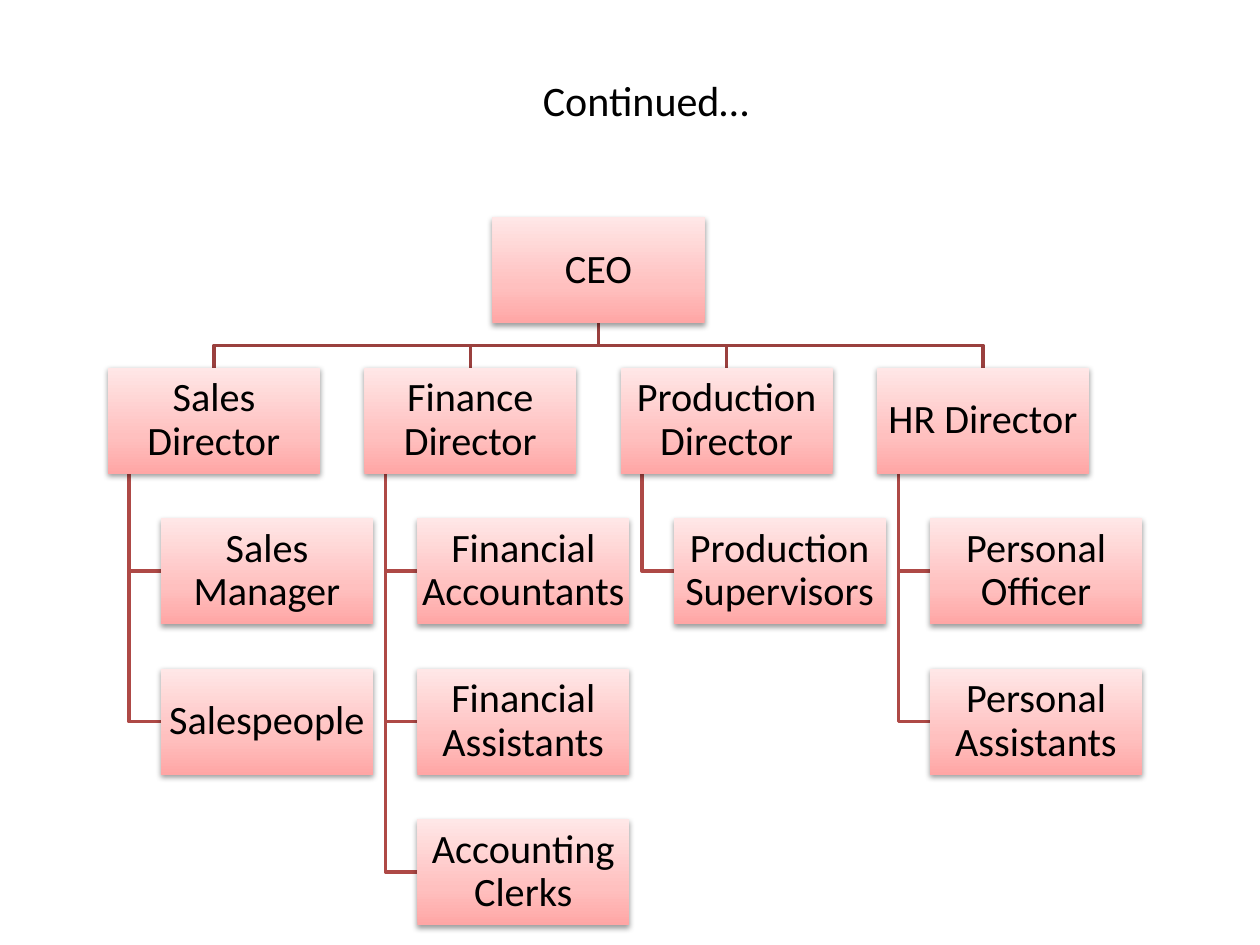
import copy

import pptx
import pptx.dml.color
import pptx.enum.shapes
import pptx.enum.text
import pptx.oxml
import pptx.oxml.ns
import pptx.util

Pt = pptx.util.Pt
RGB = pptx.dml.color.RGBColor.from_string
CENTER = pptx.enum.text.PP_ALIGN.CENTER
MIDDLE = pptx.enum.text.MSO_ANCHOR.MIDDLE

COLORS = {
    "text": "000000",
    "top_line": "9A403E",
    "staff_line": "AE4946",
    "box_bottom": "FFA6A5",
    "box_middle": "FFC0BF",
    "box_top": "FFE7E7",
}
GRADIENT = [(0, "box_bottom"), (0.35, "box_middle"), (1, "box_top")]
SHADOW = (
    f'<a:outerShdw {pptx.oxml.ns.nsdecls("a")} blurRad="40000" dist="20000" '
    'dir="5400000" rotWithShape="0"><a:srgbClr val="000000">'
    '<a:alpha val="38000"/></a:srgbClr></a:outerShdw>'
)

DEPARTMENTS = [
    ("Sales Director", ["Sales Manager", "Salespeople"]),
    ("Finance Director",
     ["Financial Accountants", "Financial Assistants", "Accounting Clerks"]),
    ("Production Director", ["Production Supervisors"]),
    ("HR Director", ["Personal Officer", "Personal Assistants"]),
]

BOX_W, BOX_H = 121.2, 60.6
LEFT, TOP = 61.7, 124.1
COLUMN_STEP, ROW_STEP = 146.5, 86
INDENT = BOX_W / 4
STEM = BOX_W / 10

presentation = pptx.Presentation()
presentation.slide_width, presentation.slide_height = Pt(720), Pt(540)
slide = presentation.slides.add_slide(presentation.slide_layouts[6])


def add_elbow(points, color):
    (start_x, start_y), *rest = [(Pt(x), Pt(y)) for x, y in points]
    builder = slide.shapes.build_freeform(start_x, start_y)
    builder.add_line_segments(rest, close=False)
    elbow = builder.convert_to_shape()
    elbow.shadow.inherit = False
    elbow.fill.background()
    elbow.line.width = Pt(2)
    elbow.line.color.rgb = RGB(COLORS[color])


def write_text(shape, text, size, line_spacing, margins):
    frame = shape.text_frame
    settings = {"word_wrap": True, "vertical_anchor": MIDDLE, **margins}
    for name, value in settings.items():
        setattr(frame, name, value)
    paragraph = frame.paragraphs[0]
    paragraph.text = text
    paragraph.alignment = CENTER
    paragraph.line_spacing = line_spacing
    font = paragraph.runs[0].font
    font.name, font.size = "Calibri", Pt(size)
    font.color.rgb = RGB(COLORS["text"])


# Work out where each post sits and which lines lead to it
ceo_left = LEFT + COLUMN_STEP * (len(DEPARTMENTS) - 1) / 2
ceo_middle = ceo_left + BOX_W / 2
ceo_bottom = TOP + BOX_H
director_top = TOP + ROW_STEP
bar_y = (ceo_bottom + director_top) / 2

posts = [("CEO", ceo_left, TOP)]
for column, (director, staff) in enumerate(DEPARTMENTS):
    left = LEFT + column * COLUMN_STEP
    middle = left + BOX_W / 2
    posts.append((director, left, director_top))
    add_elbow([(ceo_middle, ceo_bottom), (ceo_middle, bar_y),
               (middle, bar_y), (middle, director_top)], "top_line")
    for row, member in enumerate(staff, start=1):
        top = director_top + row * ROW_STEP
        posts.append((member, left + INDENT, top))
        add_elbow([(left + STEM, director_top + BOX_H),
                   (left + STEM, top + BOX_H / 2),
                   (left + INDENT, top + BOX_H / 2)], "staff_line")

# Boxes lie over the lines
box_margins = {f"margin_{side}": Pt(1.46) for side in ("left", "top", "right", "bottom")}
for post, left, top in posts:
    box = slide.shapes.add_shape(
        pptx.enum.shapes.MSO_SHAPE.RECTANGLE, Pt(left), Pt(top), Pt(BOX_W), Pt(BOX_H))
    box.line.fill.background()
    box.fill.gradient()
    box.fill.gradient_angle = 90
    stop_list = box.element.spPr.find(".//" + pptx.oxml.ns.qn("a:gsLst"))
    stop_list.append(copy.deepcopy(stop_list[-1]))
    for stop, (position, color) in zip(box.fill.gradient_stops, GRADIENT):
        stop.position = position
        stop.color.rgb = RGB(COLORS[color])
    box.shadow.inherit = False
    effects = box.element.spPr.find(pptx.oxml.ns.qn("a:effectLst"))
    effects.append(pptx.oxml.parse_xml(SHADOW))
    write_text(box, post, 23, 0.9, box_margins)

title = slide.shapes.add_textbox(Pt(48), Pt(18), Pt(642), Pt(78))
write_text(title, "Continued…", 24, 1.0, {})

presentation.save("out.pptx")
